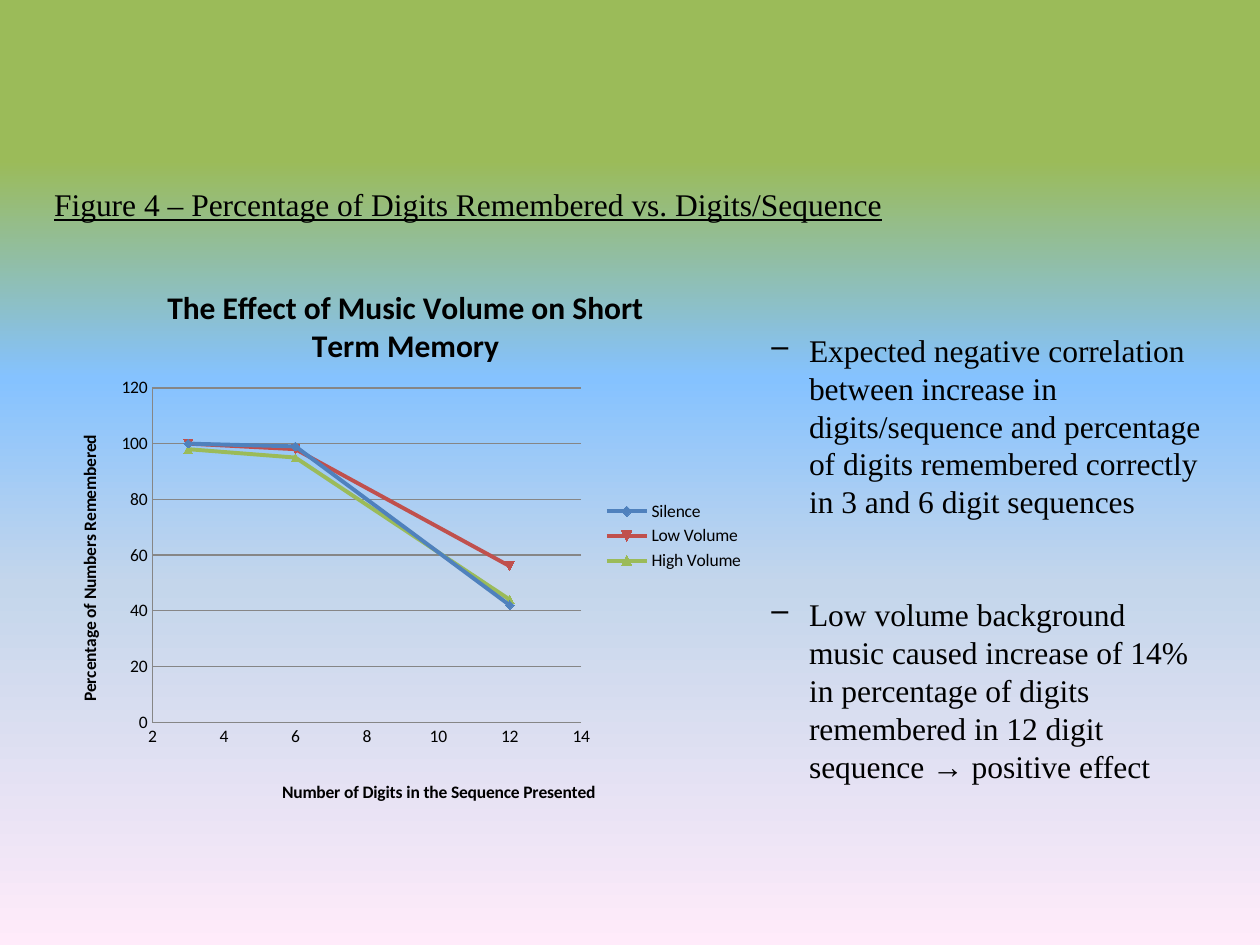
from dataclasses import dataclass

from lxml import etree
from pptx import Presentation
from pptx.chart.data import XyChartData
from pptx.dml.color import RGBColor
from pptx.enum.chart import XL_CHART_TYPE, XL_LEGEND_POSITION, XL_TICK_MARK
from pptx.oxml import parse_xml
from pptx.oxml.ns import nsdecls, qn
from pptx.util import Cm, Pt

SCATTER = XL_CHART_TYPE.XY_SCATTER_SMOOTH
LEGEND_RIGHT = XL_LEGEND_POSITION.RIGHT
NO_TICK = XL_TICK_MARK.NONE


@dataclass(frozen=True)
class Theme:
    text: str = "000000"
    grid: str = "868686"
    series: tuple = ("4F81BD", "C0504D", "9BBB59")
    background: tuple = ((17, "9BBB59"), (40, "85C2FF"), (62, "C4D6EB"), (100, "FFEBFA"))
    body_font: str = "Times New Roman"
    chart_font: str = "Calibri"
    body_size: int = 18
    label_size: int = 10


THEME = Theme()
DIGITS = (3, 6, 12)
RESULTS = {
    "Silence": (100, 99, 42),
    "Low Volume": (100, 98, 56),
    "High Volume": (98, 95, 44),
}
FINDINGS = (
    "Expected negative correlation between increase in digits/sequence and "
    "percentage of digits remembered correctly in 3 and 6 digit sequences",
    "Low volume background music caused increase of 14% in percentage of digits "
    "remembered in 12 digit sequence → positive effect",
)


def style_font(font, name, size, bold=None):
    font.name = name
    font.size = Pt(size)
    font.bold = bold
    font.color.rgb = RGBColor.from_string(THEME.text)


def paint_background(s):
    fill = s.background.fill
    fill.gradient()
    fill.gradient_angle = 270  # top to bottom
    stops = s.element.find(".//" + qn("a:gsLst"))
    for stop in list(stops):
        stops.remove(stop)
    for percent, color in THEME.background:
        stop = etree.SubElement(stops, qn("a:gs"), pos=str(percent * 1000))
        etree.SubElement(stop, qn("a:srgbClr"), val=color)


def add_text(s, box, paragraphs):
    tf = s.shapes.add_textbox(*box).text_frame
    tf.word_wrap = True
    tf.text = "\n".join(paragraphs)
    for p in tf.paragraphs:
        style_font(p.runs[0].font, THEME.body_font, THEME.body_size)
    return tf


def add_caption(s, box):
    tf = add_text(s, box, ["Figure 4 – Percentage of Digits Remembered vs. Digits/Sequence"])
    tf.paragraphs[0].runs[0].font.underline = True


def add_findings(s, box):
    tf = add_text(s, box, FINDINGS)
    indent = Cm(0.79)
    for p in tf.paragraphs:
        pPr = p._p.get_or_add_pPr()
        pPr.set("marL", str(indent))
        pPr.set("indent", str(-indent))
        etree.SubElement(pPr, qn("a:buChar"), char="‒")
    tf.paragraphs[1].space_before = Pt(43)


def manual_layout(x, y, w=None, h=None):
    """Layout element in fractions of the chart; a size means the inner plot area."""
    parts = [("xMode", "edge"), ("yMode", "edge"), ("x", x), ("y", y)]
    if w is not None:
        parts = [("layoutTarget", "inner")] + parts + [("w", w), ("h", h)]
    inner = "".join(f'<c:{tag} val="{val}"/>' for tag, val in parts)
    return parse_xml(f'<c:layout {nsdecls("c")}><c:manualLayout>{inner}</c:manualLayout></c:layout>')


def set_layout(parent, layout, index):
    for old in parent.findall(qn("c:layout")):
        parent.remove(old)
    parent.insert(index, layout)


def set_title(owner, text, size):
    tf = owner.text_frame
    tf.text = text
    style_font(tf.paragraphs[0].runs[0].font, THEME.chart_font, size, True)


def format_axis(axis, title, low, high, step, title_at):
    axis.minimum_scale, axis.maximum_scale, axis.major_unit = low, high, step
    axis.major_tick_mark = axis.minor_tick_mark = NO_TICK
    axis.format.line.color.rgb = RGBColor.from_string(THEME.grid)
    axis.format.line.width = Pt(0.75)
    set_title(axis.axis_title, title, THEME.label_size)
    set_layout(axis.axis_title._element, manual_layout(*title_at), 1)


def add_results_chart(s, box):
    data = XyChartData()
    for name, values in RESULTS.items():
        series = data.add_series(name)
        for x, y in zip(DIGITS, values):
            series.add_data_point(x, y)
    chart = s.shapes.add_chart(SCATTER, *box, data).chart
    style_font(chart.font, THEME.chart_font, THEME.label_size)
    chart.has_title = True
    set_title(chart.chart_title, "The Effect of Music Volume on Short Term Memory", THEME.body_size)
    chart.has_legend = True
    chart.legend.position = LEGEND_RIGHT
    chart.legend.include_in_layout = False

    # Axes and plot area
    format_axis(chart.category_axis, "Number of Digits in the Sequence Presented",
                2, 14, 2, (0.32, 0.94))
    format_axis(chart.value_axis, "Percentage of Numbers Remembered",
                0, 120, 20, (0.03, 0.31))
    chart.category_axis.has_major_gridlines = False
    grid = chart.value_axis.major_gridlines.format.line
    grid.color.rgb = RGBColor.from_string(THEME.grid)
    grid.width = Pt(0.75)
    plot_area = chart._chartSpace.chart.plotArea
    set_layout(plot_area, manual_layout(0.14, 0.23, 0.61, 0.61), 0)

    # Series
    plot = chart.plots[0]
    plot.vary_by_categories = False
    for series, color in zip(plot.series, THEME.series):
        rgb = RGBColor.from_string(color)
        series.smooth = True
        series.format.line.color.rgb = rgb
        series.format.line.width = Pt(2.25)
        marker = series.marker.format
        marker.fill.solid()
        marker.fill.fore_color.rgb = rgb
        marker.line.color.rgb = rgb


def main():
    prs = Presentation()
    prs.slide_width, prs.slide_height = Cm(25.4), Cm(19.05)
    s = prs.slides.add_slide(prs.slide_layouts[6])
    paint_background(s)
    add_results_chart(s, (Cm(1.09), Cm(5.28), Cm(14.17), Cm(11.05)))
    add_caption(s, (Cm(0.84), Cm(3.61), Cm(17.78), Cm(1.02)))
    add_findings(s, (Cm(15.27), Cm(6.55), Cm(9.27), Cm(11.02)))
    prs.save("out.pptx")


if __name__ == "__main__":
    main()
